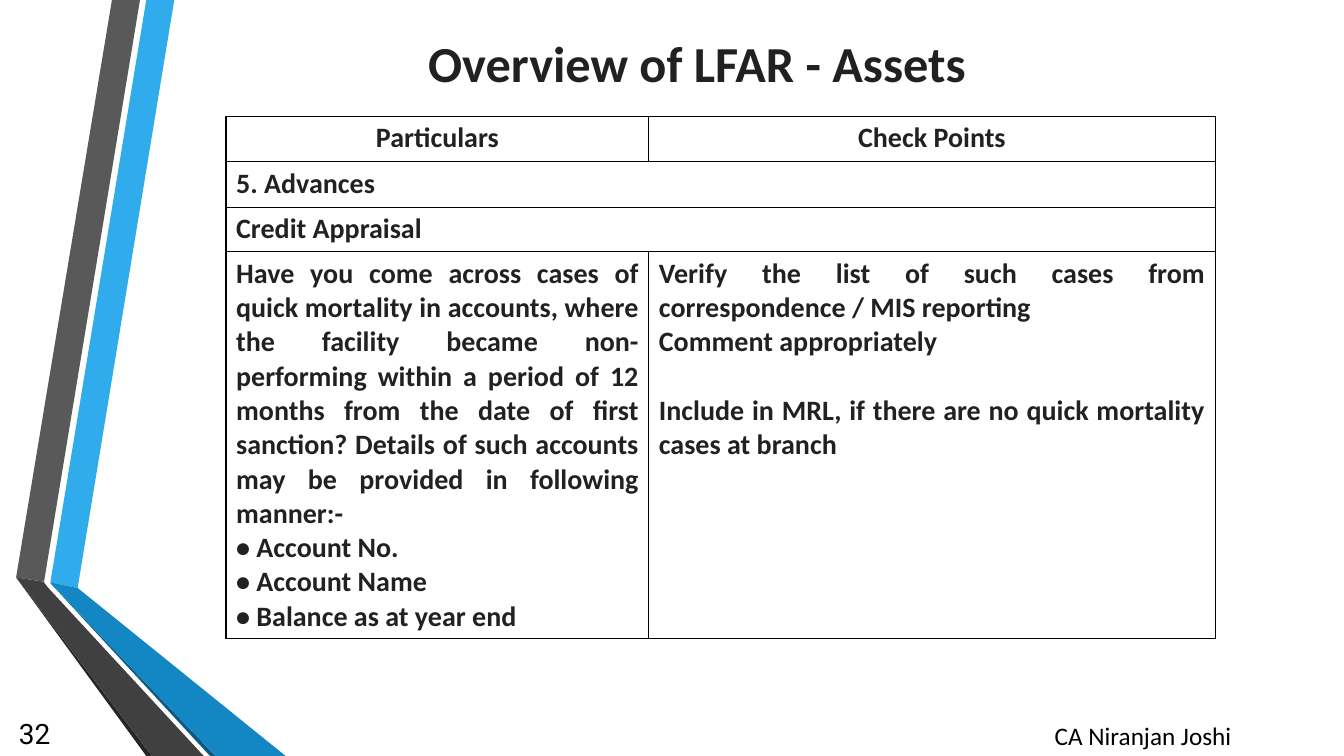
from dataclasses import dataclass
from typing import Any

import lxml.etree
import pptx
import pptx.dml.color
import pptx.enum.text
import pptx.oxml
import pptx.oxml.ns
import pptx.util

Pt = pptx.util.Pt
Align = pptx.enum.text.PP_ALIGN
Anchor = pptx.enum.text.MSO_ANCHOR


@dataclass(frozen=True)
class TextStyle:
    size: float
    color: str
    font: str = "Calibri"
    bold: bool = False


@dataclass(frozen=True)
class Theme:
    blue: str = "30ACEC"
    mid_blue: str = "1287C3"
    deep_blue: str = "0C5A82"
    grey: str = "595959"
    dark_grey: str = "404040"
    near_black: str = "262626"
    border: str = "000000"
    border_width: float = 1
    title: TextStyle = TextStyle(36, "212121", bold=True)
    cell: TextStyle = TextStyle(20, "212121", bold=True)
    author: TextStyle = TextStyle(18, "000000")
    number: TextStyle = TextStyle(20, "000000", "Roboto")


THEME = Theme()


@dataclass(frozen=True)
class Ribbon:
    color: str
    points: tuple[tuple[float, float], ...]


@dataclass(frozen=True)
class Line:
    text: str
    align: Any = Align.JUSTIFY
    space_before: float = 0


@dataclass(frozen=True)
class Label:
    line: Line
    style: TextStyle
    box: tuple[float, float, float, float]
    anchor: Any = Anchor.MIDDLE


@dataclass(frozen=True)
class Row:
    height: float
    cells: tuple[tuple[Line, ...], ...]


RIBBONS = (
    Ribbon(THEME.blue, ((36, 416), (55.5, 420), (124.5, 0), (104.5, 0))),
    Ribbon(THEME.grey, ((100, 0), (80, 0), (11.5, 412.5), (31.5, 415.5))),
    Ribbon(THEME.near_black, ((11.5, 412.5), (104.5, 540), (108.5, 540))),
    Ribbon(THEME.deep_blue, ((36, 416.5), (150, 540), (154, 540))),
    Ribbon(THEME.mid_blue, ((36, 416.5), (154, 540), (204, 540), (55.5, 420), (36, 416))),
    Ribbon(THEME.dark_grey, ((145.5, 540), (34.5, 420), (31, 415.5), (11.5, 412.5), (108.5, 540))),
)

LABELS = (
    Label(Line("Overview of LFAR - Assets", Align.CENTER), THEME.title, (174, 18, 648, 53.5)),
    Label(Line("CA Niranjan Joshi", Align.CENTER), THEME.author, (690.5, 511, 252, 29), Anchor.TOP),
    Label(Line("32", Align.RIGHT), THEME.number, (0, 509, 43, 29)),
)

TABLE_LEFT, TABLE_TOP = 161.5, 83
COLUMN_WIDTHS = (302, 404.5)
ROWS = (
    Row(32.5, ((Line("Particulars", Align.CENTER),), (Line("Check Points", Align.CENTER),))),
    Row(32.5, ((Line("5. Advances", Align.LEFT),),)),
    Row(31.5, ((Line("Credit Appraisal"),),)),
    Row(276.5, (
        (
            Line("Have you come across cases of quick mortality in accounts, where the facility "
                 "became non-performing within a period of 12 months from the date of first "
                 "sanction? Details of such accounts may be provided in following manner:-"),
            Line("• Account No."),
            Line("• Account Name"),
            Line("• Balance as at year end"),
        ),
        (
            Line("Verify the list of such cases from correspondence / MIS reporting"),
            Line("Comment appropriately"),
            Line("Include in MRL, if there are no quick mortality cases at branch", space_before=24.5),
        ),
    )),
)


def rgb(color: str) -> pptx.dml.color.RGBColor:
    return pptx.dml.color.RGBColor.from_string(color)


def write_lines(frame: Any, lines: tuple[Line, ...], style: TextStyle) -> None:
    font_format = {"name": style.font, "size": Pt(style.size), "bold": style.bold}
    for index, line in enumerate(lines):
        paragraph = frame.add_paragraph() if index else frame.paragraphs[0]
        paragraph.alignment = line.align
        if line.space_before:
            paragraph.space_before = Pt(line.space_before)
        run = paragraph.add_run()
        run.text = line.text
        for attribute, value in font_format.items():
            setattr(run.font, attribute, value)
        run.font.color.rgb = rgb(style.color)


def draw_ribbon(slide: Any, ribbon: Ribbon) -> None:
    start, *corners = [(Pt(x), Pt(y)) for x, y in ribbon.points]
    builder = slide.shapes.build_freeform(*start)
    builder.add_line_segments(corners, close=True)
    band = builder.convert_to_shape()
    band.shadow.inherit = False
    band.fill.solid()
    band.fill.fore_color.rgb = rgb(ribbon.color)
    band.line.fill.background()


def draw_label(slide: Any, label: Label) -> None:
    frame = slide.shapes.add_textbox(*map(Pt, label.box)).text_frame
    frame.word_wrap = True
    frame.vertical_anchor = label.anchor
    write_lines(frame, (label.line,), label.style)


def outline_cell(cell: Any) -> None:
    """Clear the cell's fill and rule all four of its sides."""
    cell.fill.background()
    properties = cell._tc.get_or_add_tcPr()
    qn = pptx.oxml.ns.qn
    for index, side in enumerate(("a:lnL", "a:lnR", "a:lnT", "a:lnB")):
        edge = lxml.etree.Element(qn(side), w=str(Pt(THEME.border_width)))
        fill = lxml.etree.SubElement(edge, qn("a:solidFill"))
        lxml.etree.SubElement(fill, qn("a:srgbClr"), val=THEME.border)
        properties.insert(index, edge)


def draw_checklist(slide: Any) -> None:
    size = (sum(COLUMN_WIDTHS), sum(row.height for row in ROWS))
    checklist = slide.shapes.add_table(
        len(ROWS), len(COLUMN_WIDTHS), *map(Pt, (TABLE_LEFT, TABLE_TOP, *size))
    ).table
    for attribute, value in {"first_row": False, "horz_banding": False}.items():
        setattr(checklist, attribute, value)
    for column, width in zip(checklist.columns, COLUMN_WIDTHS):
        column.width = Pt(width)
    for row_index, row in enumerate(ROWS):
        checklist.rows[row_index].height = Pt(row.height)
        cells = [checklist.cell(row_index, column) for column in range(len(COLUMN_WIDTHS))]
        for cell in cells:
            outline_cell(cell)
        if len(row.cells) == 1:
            cells[0].merge(cells[-1])
        for cell, lines in zip(cells, row.cells):
            write_lines(cell.text_frame, lines, THEME.cell)


def main() -> None:
    deck = pptx.Presentation()
    deck.slide_width, deck.slide_height = Pt(960), Pt(540)
    slide = deck.slides.add_slide(deck.slide_layouts[6])
    for ribbon in RIBBONS:
        draw_ribbon(slide, ribbon)
    draw_checklist(slide)
    for label in LABELS:
        draw_label(slide, label)
    deck.save("out.pptx")


if __name__ == "__main__":
    main()
